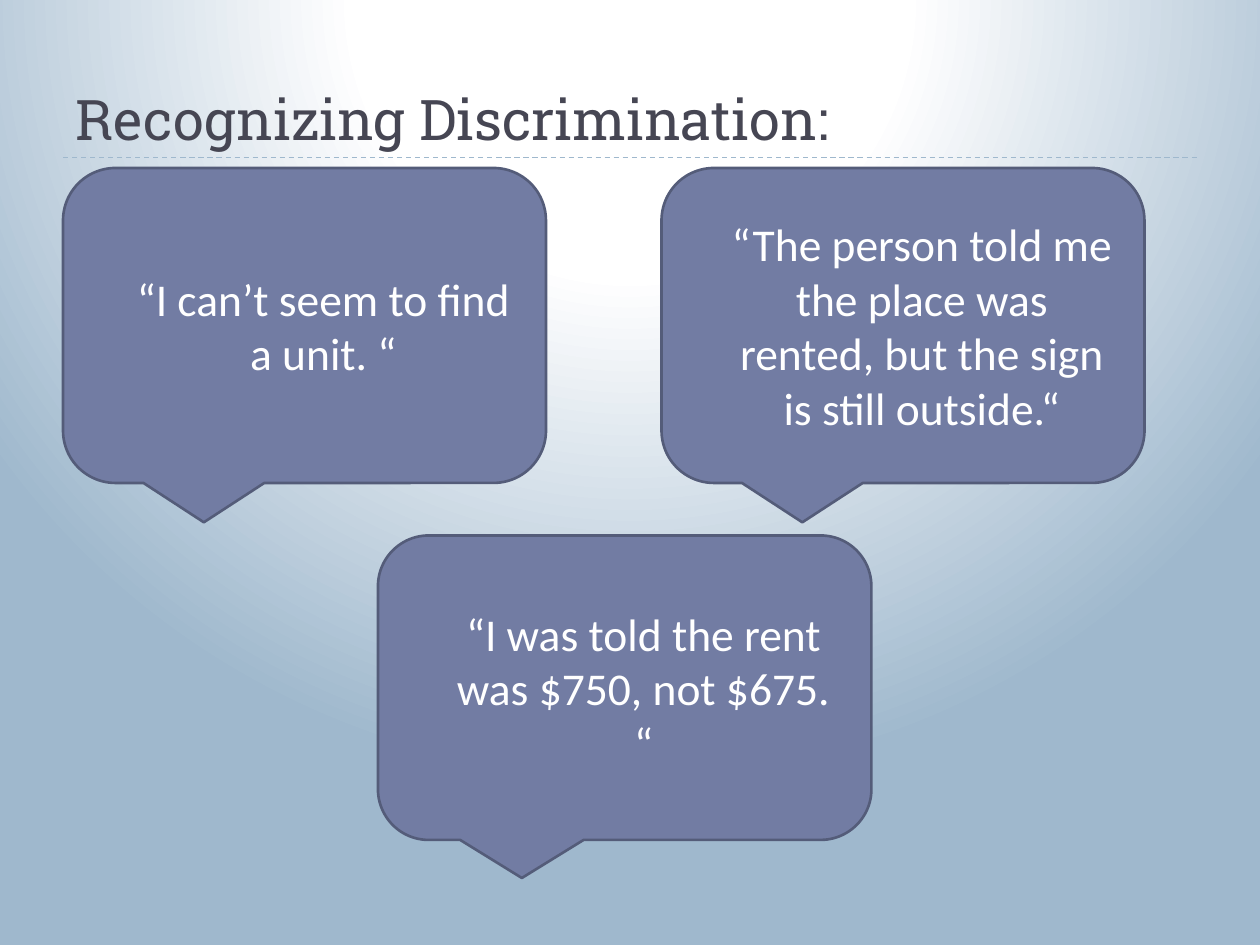
from lxml.etree import SubElement
from pptx import Presentation
from pptx.dml.color import RGBColor
from pptx.enum.dml import MSO_LINE
from pptx.enum.shapes import MSO_CONNECTOR, MSO_SHAPE
from pptx.enum.text import MSO_ANCHOR, PP_ALIGN
from pptx.oxml import parse_xml
from pptx.oxml.ns import nsdecls, qn
from pptx.util import Pt

TITLE = "Recognizing Discrimination:"
# quote, (left, top, width, height)
QUOTES = [
    ("“I can’t seem to find a unit. “", (36, 96, 276, 180)),
    ("“The person told me the place was rented, but the sign is still outside.“",
     (378, 96, 276, 180)),
    ("“I was told the rent was $750, not $675. “", (216, 306, 282, 174)),
]
COLORS = {
    "glow": "FFFFFF",
    "sky": "9FB8CD",
    "title": "464653",
    "bubble": "727CA3",
    "outline": "545C79",
    "quote": "FFFFFF",
}
MARGIN, TITLE_TOP, RULE_Y = 36, 12, 90
CONTENT_WIDTH = 720 - 2 * MARGIN
QUOTE_INDENT = 21.6


def rgb(name):
    return RGBColor.from_string(COLORS[name])


def paint_background(slide):
    """Radial gradient glowing from above the top edge."""
    slide.background.fill.gradient()
    gradient = slide.element.find(".//" + qn("a:gradFill"))
    stops = "".join(
        f'<a:gs pos="{percent * 1000}"><a:srgbClr val="{COLORS[name]}"/></a:gs>'
        for percent, name in ((0, "glow"), (35, "glow"), (100, "sky")))
    gradient.getparent().replace(gradient, parse_xml(
        f'<a:gradFill {nsdecls("a")} rotWithShape="1"><a:gsLst>{stops}</a:gsLst>'
        '<a:path path="circle">'
        '<a:fillToRect l="50000" t="-80000" r="50000" b="180000"/>'
        '</a:path></a:gradFill>'))


def write(frame, text, font_name, size, color, align, anchor):
    frame.word_wrap = True
    frame.vertical_anchor = anchor
    paragraph = frame.paragraphs[0]
    paragraph.alignment = align
    run = paragraph.add_run()
    run.text = text
    run.font.name = font_name
    run.font.size = Pt(size)
    run.font.color.rgb = rgb(color)


def add_title(slide):
    title = slide.shapes.add_textbox(
        Pt(MARGIN), Pt(TITLE_TOP), Pt(CONTENT_WIDTH), Pt(RULE_Y - TITLE_TOP))
    write(title.text_frame, TITLE, "Roboto Slab", 32, "title",
          PP_ALIGN.LEFT, MSO_ANCHOR.BOTTOM)


def add_rule(slide):
    rule = slide.shapes.add_connector(
        MSO_CONNECTOR.STRAIGHT, Pt(MARGIN), Pt(RULE_Y),
        Pt(MARGIN + CONTENT_WIDTH), Pt(RULE_Y))
    rule.line.color.rgb = rgb("sky")
    rule.line.width = Pt(0.75)
    rule.line.dash_style = MSO_LINE.DASH
    SubElement(rule.element.spPr, qn("a:effectLst"))


def add_bubble(slide, quote, box):
    bubble = slide.shapes.add_shape(
        MSO_SHAPE.ROUNDED_RECTANGULAR_CALLOUT, *map(Pt, box))
    bubble.shadow.inherit = False
    bubble.fill.solid()
    bubble.fill.fore_color.rgb = rgb("bubble")
    bubble.line.color.rgb = rgb("outline")
    bubble.line.width = Pt(1.5)
    bubble.text_frame.margin_left = Pt(7.2 + QUOTE_INDENT)
    write(bubble.text_frame, quote, "Calibri", 26, "quote",
          PP_ALIGN.CENTER, MSO_ANCHOR.MIDDLE)


def main():
    deck = Presentation()
    deck.slide_width, deck.slide_height = Pt(720), Pt(540)
    slide = deck.slides.add_slide(deck.slide_layouts[6])
    paint_background(slide)
    add_rule(slide)
    add_title(slide)
    for quote, box in QUOTES:
        add_bubble(slide, quote, box)
    deck.save("out.pptx")


if __name__ == "__main__":
    main()
